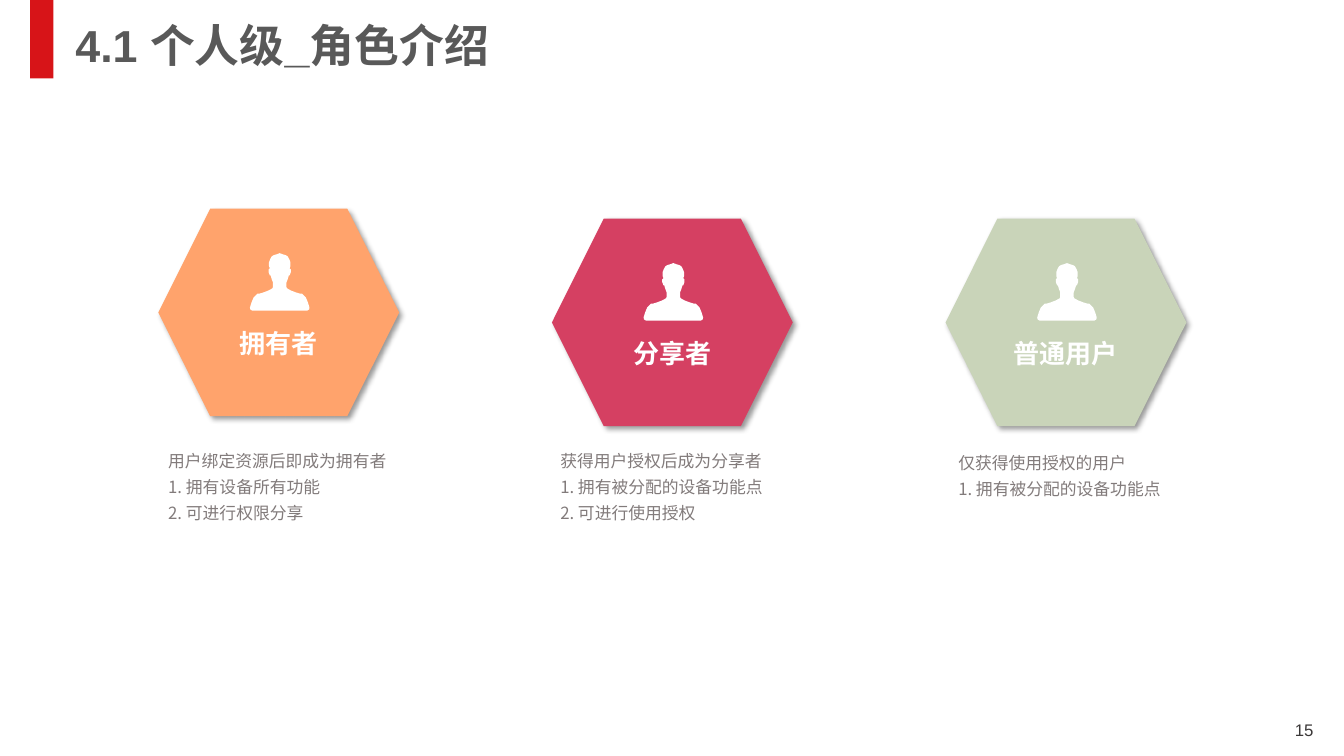
from lxml.etree import SubElement
from pptx import Presentation
from pptx.dml.color import RGBColor
from pptx.enum.shapes import MSO_SHAPE
from pptx.enum.text import MSO_ANCHOR, PP_ALIGN
from pptx.oxml.ns import qn
from pptx.util import Cm, Pt

NOTO = "Noto Sans CJK SC"
PITCH = 9.92
HALF = [
    (0, 0), (8, 3), (15, 5), (20, 8), (24, 15), (27, 23), (27, 33),
    (25, 38), (28, 41), (28, 48), (25, 56), (23, 56), (20, 66), (18, 71),
    (17, 74), (17, 86), (19, 89), (28, 94), (41, 99), (51, 102), (56, 102),
    (66, 112), (71, 124), (75, 137), (74, 142), (69, 145),
]
ROLES = [
    ("拥有者", "FFA36C", 5.26, (3.99, 11.07, 2.92),
     ["用户绑定资源后即成为拥有者", "1. 拥有设备所有功能", "2. 可进行权限分享"]),
    ("分享者", "D54062", 5.51, (13.87, 11.07, 2.26),
     ["获得用户授权后成为分享者", "1. 拥有被分配的设备功能点", "2. 可进行使用授权"]),
    ("普通用户", "C9D4B9", 5.51, (23.9, 11.13, 1.57),
     ["仅获得使用授权的用户", "1. 拥有被分配的设备功能点"]),
]


def paint(shape, color):
    """Give a shape a flat fill with no line and no shadow."""
    shape.fill.solid()
    shape.fill.fore_color.rgb = RGBColor.from_string(color)
    shape.line.fill.background()
    shape.shadow.inherit = False


def shade(shape):
    """Add a soft shadow to the lower right of a shape."""
    effects = shape._element.spPr.find(qn("a:effectLst"))
    outer = SubElement(effects, qn("a:outerShdw"), blurRad=str(Pt(4)),
                       dist=str(Pt(3)), dir="2700000", algn="tl",
                       rotWithShape="0")
    black = SubElement(outer, qn("a:srgbClr"), val="000000")
    SubElement(black, qn("a:alpha"), val="40000")


def block(shapes, kind, box, color):
    """Draw a filled preset shape."""
    shape = shapes.add_shape(kind, *map(Cm, box))
    paint(shape, color)
    return shape


def write(shapes, lines, box, size, color, font="Arial", bold=False,
          align=PP_ALIGN.LEFT, anchor=MSO_ANCHOR.TOP, space=1.0, pad=0.13):
    """Place a text box with one paragraph per line."""
    frame = shapes.add_textbox(*map(Cm, box)).text_frame
    frame.word_wrap = True
    frame.vertical_anchor = anchor
    frame.margin_top = frame.margin_bottom = Cm(pad)
    frame.text = "\n".join(lines)
    for para in frame.paragraphs:
        para.alignment = align
        para.line_spacing = space
        for run in para.runs:
            run.font.size = Pt(size)
            run.font.bold = bold
            run.font.name = font
            run.font.color.rgb = RGBColor.from_string(color)
            SubElement(run.font._element, qn("a:ea"), typeface=NOTO)


def bust(shapes, left, top):
    """Draw a white head and shoulders, mirrored about its middle."""
    points = HALF + [(-x, y) for x, y in reversed(HALF)]
    pen = shapes.build_freeform(*points[0], scale=Cm(0.01))
    pen.add_line_segments(points[1:], close=True)
    paint(pen.convert_to_shape(Cm(left), Cm(top)), "FFFFFF")


def badge(slide, name, color, left, top):
    """Group a hexagon with its figure and role name."""
    shapes = slide.shapes.add_group_shape().shapes
    shade(block(shapes, MSO_SHAPE.HEXAGON, (left, top, 6.07, 5.23), color))
    bust(shapes, left + 3.06, top + 1.12)
    write(shapes, [name], (left + 0.86, top + 2.87, 4.34, 1.04), 18.6,
          "FFFFFF", bold=True, align=PP_ALIGN.CENTER,
          anchor=MSO_ANCHOR.MIDDLE, pad=0)


def main():
    """Build and save the slide."""
    deck = Presentation()
    deck.slide_width, deck.slide_height = Cm(33.87), Cm(19.05)
    slide = deck.slides.add_slide(deck.slide_layouts[6])
    shapes = slide.shapes
    block(shapes, MSO_SHAPE.RECTANGLE, (0.76, 0, 0.59, 1.98), "D71418")
    write(shapes, ["15"], (25.73, 18.01, 7.62, 1.02), 12, "3B3838",
          align=PP_ALIGN.RIGHT)
    write(shapes, ["4.1 个人级_角色介绍"], (1.65, 0.58, 29.21, 1.24), 32,
          "595959", bold=True, anchor=MSO_ANCHOR.MIDDLE, space=0.9, pad=0)
    for col, (name, color, top, place, lines) in enumerate(ROLES):
        badge(slide, name, color, 3.99 + col * PITCH, top)
        left, head, height = place
        write(shapes, lines, (left, head, 6.07, height), 12, "827B7B",
              font=NOTO, space=1.3)
    deck.save("out.pptx")


if __name__ == "__main__":
    main()
